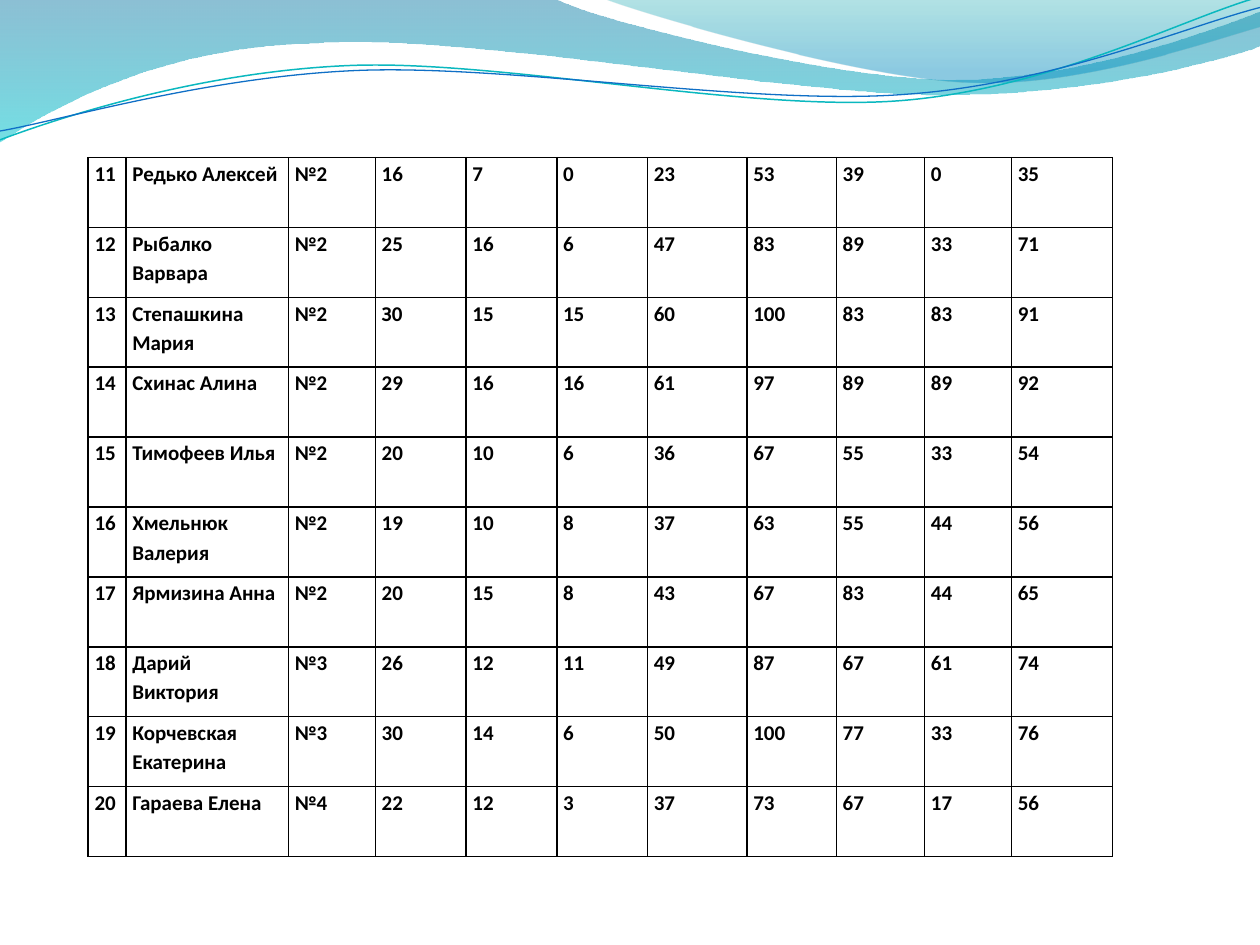
from dataclasses import dataclass
from math import cos, radians, sin
from typing import Optional

from lxml import etree
from pptx import Presentation
from pptx.dml.color import RGBColor
from pptx.enum.text import MSO_ANCHOR
from pptx.oxml.ns import qn
from pptx.util import Inches, Pt

TOP = MSO_ANCHOR.TOP
FONT = "Calibri"
COLORS = {
    "text": "000000",
    "border": "000000",
    "band_top": "0074A1",
    "band_bottom": "00C6CF",
    "crest_top": "00A1A9",
    "crest_bottom": "008BBF",
    "teal_line": "0AB8BF",
    "blue_line": "0F6FC6",
}

Point = tuple[float, float]


@dataclass(frozen=True)
class Stop:
    position: float
    color: str
    opacity: int


@dataclass(frozen=True)
class Wave:
    start: Point
    segments: list[tuple[float, ...]]
    stops: tuple[Stop, ...] = ()
    line: Optional[str] = None
    width: float = 0
    center: Point = (0, 0)
    rotation: float = 0


@dataclass(frozen=True)
class Result:
    number: int
    name: str
    school: str
    scores: str


WAVES = [
    Wave(
        (0, 0),
        [
            (4.4, -0.01),
            (4.76, 0.17, 6.64, 0.63, 7.58, 0.63),
            (8.53, 0.63, 9.58, 0.26, 10, 0.09),
            (10.01, 0.36),
            (9.83, 0.44, 8.7, 0.76, 7.46, 0.75),
            (6.22, 0.75, 3.82, 0.28, 2.57, 0.34),
            (1.29, 0.36, 0.46, 0.83, -0.01, 1.13),
            (0, 0),
        ],
        stops=(Stop(0, "band_top", 45), Stop(1, "band_bottom", 55)),
    ),
    Wave(
        (4.79, -0.01),
        [
            (5.09, 0.11, 6.82, 0.62, 7.69, 0.65),
            (8.56, 0.69, 9.61, 0.32, 10, 0.21),
            (10, 0),
            (4.79, -0.01),
        ],
        stops=(Stop(0, "crest_top", 30), Stop(0.8, "crest_bottom", 45)),
    ),
    Wave(
        (0, 1.11),
        [
            (0.48, 0.93, 1.58, 0.57, 2.77, 0.52),
            (3.95, 0.47, 5.93, 0.89, 7.13, 0.8),
            (8.33, 0.71, 9.38, 0.15, 9.98, -0.02),
        ],
        line="teal_line",
        width=0.85,
        center=(4.99, 0.58),
        rotation=-2.7,
    ),
    Wave(
        (0, 1.04),
        [
            (0.47, 0.96, 1.64, 0.61, 2.83, 0.56),
            (4.03, 0.51, 5.97, 0.84, 7.17, 0.75),
            (8.36, 0.67, 9.41, 0.21, 10, 0.06),
        ],
        line="blue_line",
        width=0.75,
        center=(5, 0.59),
        rotation=-2.7,
    ),
]

COLUMN_WIDTHS = [0.3, 1.29, 0.69, 0.72, 0.72, 0.72, 0.79, 0.71, 0.7, 0.69, 0.8]
TABLE_HEIGHT = 5.55
RESULTS = [
    Result(11, "Редько Алексей", "№2", "16 7 0 23 53 39 0 35"),
    Result(12, "Рыбалко Варвара", "№2", "25 16 6 47 83 89 33 71"),
    Result(13, "Степашкина Мария", "№2", "З0 15 15 60 100 83 83 91"),
    Result(14, "Схинас Алина", "№2", "29 16 16 61 97 89 89 92"),
    Result(15, "Тимофеев Илья", "№2", "20 10 6 36 67 55 33 54"),
    Result(16, "Хмельнюк Валерия", "№2", "19 10 8 37 63 55 44 56"),
    Result(17, "Ярмизина Анна", "№2", "20 15 8 43 67 83 44 65"),
    Result(18, "Дарий Виктория", "№3", "26 12 11 49 87 67 61 74"),
    Result(19, "Корчевская Екатерина", "№3", "30 14 6 50 100 77 33 76"),
    Result(20, "Гараева Елена", "№4", "22 12 3 37 73 67 17 56"),
]


def rgb(name: str) -> RGBColor:
    return RGBColor.from_string(COLORS[name])


def level(point: Point, wave: Wave) -> tuple[int, int]:
    angle = radians(-wave.rotation)
    x, y = point[0] - wave.center[0], point[1] - wave.center[1]
    return (
        Inches(wave.center[0] + x * cos(angle) - y * sin(angle)),
        Inches(wave.center[1] + x * sin(angle) + y * cos(angle)),
    )


def bend(sp, wave: Wave) -> None:
    lines = iter(list(sp.element.spPr.iter(qn("a:lnTo"))))
    for segment in wave.segments:
        group = [next(lines) for _ in segment[::2]]
        if len(group) == 1:
            continue
        curve = etree.Element(qn("a:cubicBezTo"))
        group[0].addprevious(curve)
        for line in group:
            curve.append(line[0])
            line.getparent().remove(line)


def draw_wave(s, wave: Wave) -> None:
    points = [wave.start]
    for segment in wave.segments:
        points += zip(segment[::2], segment[1::2])
    vertices = [level(point, wave) for point in points]
    builder = s.shapes.build_freeform(*vertices[0])
    builder.add_line_segments(vertices[1:], close=False)
    sp = builder.convert_to_shape()
    bend(sp, wave)
    sp.rotation = wave.rotation
    sp.shadow.inherit = False
    if wave.line:
        sp.fill.background()
        sp.line.color.rgb = rgb(wave.line)
        sp.line.width = Pt(wave.width)
        return
    sp.line.fill.background()
    sp.fill.gradient()
    sp.fill.gradient_angle = 270
    for target, stop in zip(sp.fill.gradient_stops, wave.stops):
        target.color.rgb = rgb(stop.color)
        target.position = stop.position
    for color, stop in zip(sp.element.spPr.iter(qn("a:srgbClr")), wave.stops):
        etree.SubElement(color, qn("a:alpha"), val=str(stop.opacity * 1000))


def add_borders(cell) -> None:
    properties = cell._tc.get_or_add_tcPr()
    for side in ("lnL", "lnR", "lnT", "lnB"):
        line = etree.SubElement(properties, qn(f"a:{side}"), w=str(Pt(1)))
        fill = etree.SubElement(line, qn("a:solidFill"))
        etree.SubElement(fill, qn("a:srgbClr"), val=COLORS["border"])


def fill_cell(cell, text: str) -> None:
    add_borders(cell)
    cell.fill.background()
    cell.margin_left = cell.margin_right = Inches(0.05)
    cell.margin_top = cell.margin_bottom = 0
    cell.vertical_anchor = TOP
    p = cell.text_frame.paragraphs[0]
    p.line_spacing = 1.15
    r = p.add_run()
    r.text = text
    r.font.name, r.font.size, r.font.bold = FONT, Pt(12), True
    r.font.color.rgb = rgb("text")


def draw_results(s, results: list[Result]) -> None:
    size = Inches(sum(COLUMN_WIDTHS)), Inches(TABLE_HEIGHT)
    frame = s.shapes.add_table(len(results), len(COLUMN_WIDTHS), Inches(0.7), Inches(1.25), *size)
    table = frame.table
    table.first_row = table.horz_banding = False
    for column, width in zip(table.columns, COLUMN_WIDTHS):
        column.width = Inches(width)
    for row, result in zip(table.rows, results):
        row.height = Inches(TABLE_HEIGHT / len(results))
        texts = [str(result.number), result.name, result.school, *result.scores.split()]
        for cell, text in zip(row.cells, texts):
            fill_cell(cell, text)


def main() -> None:
    prs = Presentation()
    prs.slide_width, prs.slide_height = Inches(10), Inches(7.5)
    s = prs.slides.add_slide(prs.slide_layouts[6])
    for wave in WAVES:
        draw_wave(s, wave)
    draw_results(s, RESULTS)
    prs.save("out.pptx")


if __name__ == "__main__":
    main()
